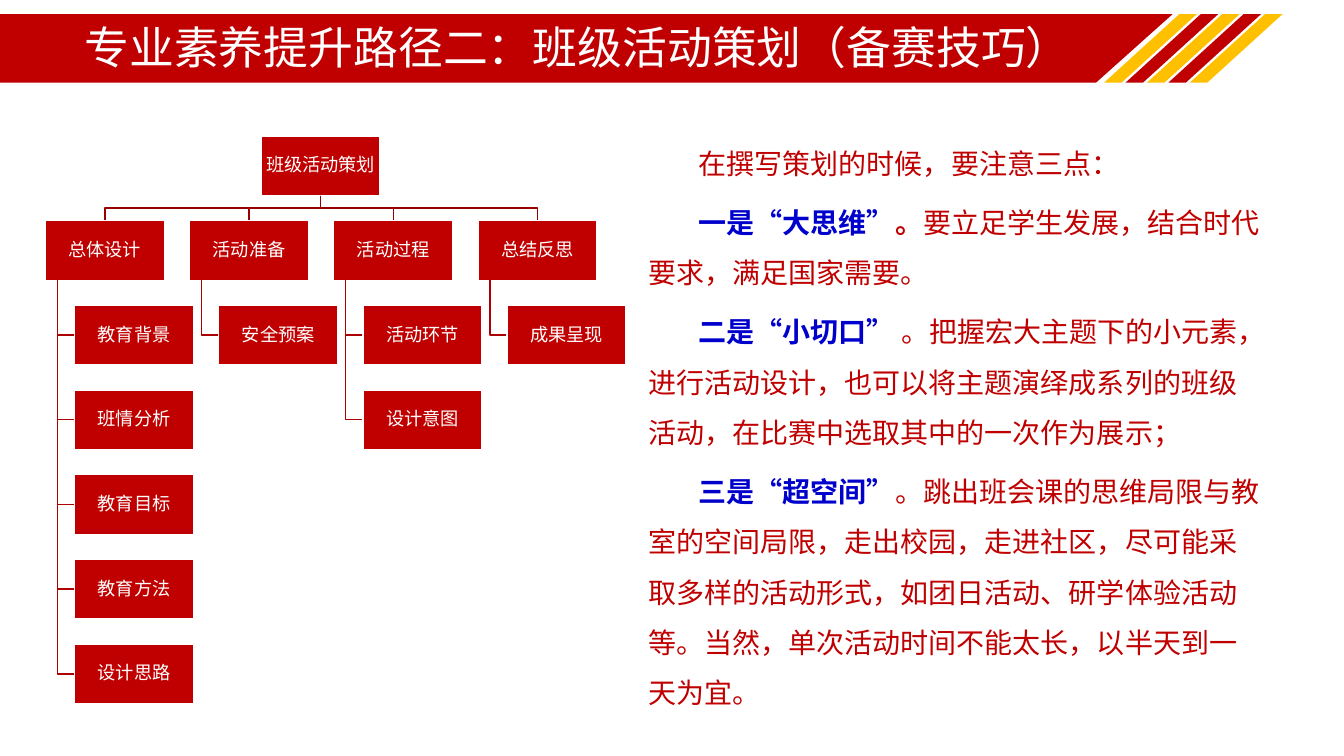
from dataclasses import dataclass

from pptx import Presentation
from pptx.dml.color import RGBColor
from pptx.enum.shapes import MSO_SHAPE
from pptx.enum.text import MSO_ANCHOR, MSO_AUTO_SIZE, PP_ALIGN
from pptx.util import Inches, Pt

RECT = MSO_SHAPE.RECTANGLE
PARALLELOGRAM = MSO_SHAPE.PARALLELOGRAM
MIDDLE = MSO_ANCHOR.MIDDLE
CENTER = PP_ALIGN.CENTER
GROW = MSO_AUTO_SIZE.SHAPE_TO_FIT_TEXT


@dataclass(frozen=True)
class Theme:
    red: RGBColor = RGBColor(0xC0, 0x00, 0x00)
    gold: RGBColor = RGBColor(0xFF, 0xC0, 0x00)
    blue: RGBColor = RGBColor(0x00, 0x00, 0xCC)
    white: RGBColor = RGBColor(0xFF, 0xFF, 0xFF)
    trunk: RGBColor = RGBColor(0x9A, 0x00, 0x00)
    branch: RGBColor = RGBColor(0xAE, 0x00, 0x00)
    heading_font: str = "Roboto"
    body_font: str = "Times New Roman"
    title_size: Pt = Pt(32)
    body_size: Pt = Pt(20)
    box_size: Pt = Pt(13)
    line_width: Pt = Pt(1)


THEME = Theme()

TITLE = "专业素养提升路径二：班级活动策划（备赛技巧）"
ROOT = "班级活动策划"
BRANCHES = [
    ("总体设计", ["教育背景", "班情分析", "教育目标", "教育方法", "设计思路"]),
    ("活动准备", ["安全预案"]),
    ("活动过程", ["活动环节", "设计意图"]),
    ("总结反思", ["成果呈现"]),
]
# Each paragraph: bold blue lead, bold red text, plain red text
ADVICE = [
    ("", "", "在撰写策划的时候，要注意三点："),
    ("一是“大思维”", "。", "要立足学生发展，结合时代要求，满足国家需要。"),
    ("二是“小切口” ", "", "。把握宏大主题下的小元素，进行活动设计，也可以将主题演绎成"
     "系列的班级活动，在比赛中选取其中的一次作为展示；"),
    ("三是“超空间”", "", "。跳出班会课的思维局限与教室的空间局限，走出校园，走进社区，"
     "尽可能采取多样的活动形式，如团日活动、研学体验活动等。当然，单次活动时间不能太长，"
     "以半天到一天为宜。"),
]

# Organisation chart grid, in inches
BOX_W, BOX_H = 1.18, 0.59
ROOT_X, ROOT_Y = 2.59, 1.35
FIRST_X, COLUMN_STEP, ROW_STEP = 0.45, 1.43, 0.84
LEAF_INDENT, STEM_INDENT = 0.29, 0.12


def style_font(p, name, size, color):
    p.font.name = name
    p.font.size = size
    p.font.color.rgb = color


def add_stripe(slide, x, w, adj, color):
    sp = slide.shapes.add_shape(PARALLELOGRAM, Inches(x), Inches(0.14), Inches(w), Inches(0.68))
    sp.adjustments[0] = adj
    sp.shadow.inherit = False
    sp.fill.solid()
    sp.fill.fore_color.rgb = color
    sp.line.fill.background()


def add_header(slide):
    add_stripe(slide, -0.91, 12.54, 1.117, THEME.red)
    for i in range(5):
        add_stripe(slide, 10.95 + 0.2125 * i, 0.92, 1.098, THEME.red if i % 2 else THEME.gold)

    tf = slide.shapes.add_textbox(Inches(0.74), Inches(0.21), Inches(11.5), Inches(0.57)).text_frame
    tf.word_wrap = True
    tf.vertical_anchor = MIDDLE
    p = tf.paragraphs[0]
    p.text = TITLE
    p.line_spacing = 0.9
    style_font(p, THEME.heading_font, THEME.title_size, THEME.white)


def add_advice(slide):
    tf = slide.shapes.add_textbox(Inches(6.33), Inches(1.24), Inches(6.31), Inches(5.34)).text_frame
    tf.word_wrap = True
    tf.auto_size = GROW
    for i, (lead, strong, plain) in enumerate(ADVICE):
        p = tf.add_paragraph() if i else tf.paragraphs[0]
        p._p.get_or_add_pPr().set("indent", str(Inches(0.5)))
        p.line_spacing = 1.5
        p.space_after = Pt(6)
        style_font(p, THEME.body_font, THEME.body_size, THEME.red)
        for text, color, bold in ((lead, THEME.blue, True), (strong, THEME.red, True),
                                  (plain, THEME.red, False)):
            if text:
                r = p.add_run()
                r.text = text
                r.font.bold = bold
                r.font.color.rgb = color


def add_elbow(slide, points, color):
    start, *rest = [(Inches(x), Inches(y)) for x, y in points]
    builder = slide.shapes.build_freeform(*start)
    builder.add_line_segments(rest, close=False)
    sp = builder.convert_to_shape()
    sp.shadow.inherit = False
    sp.fill.background()
    sp.line.color.rgb = color
    sp.line.width = THEME.line_width


def add_box(slide, x, y, text):
    sp = slide.shapes.add_shape(RECT, Inches(x), Inches(y), Inches(BOX_W), Inches(BOX_H))
    sp.shadow.inherit = False
    sp.fill.solid()
    sp.fill.fore_color.rgb = THEME.red
    sp.line.color.rgb = THEME.white
    sp.line.width = THEME.line_width
    tf = sp.text_frame
    tf.word_wrap = True
    tf.vertical_anchor = MIDDLE
    tf.margin_left = tf.margin_right = tf.margin_top = tf.margin_bottom = Inches(0.01)
    p = tf.paragraphs[0]
    p.text = text
    p.alignment = CENTER
    p.line_spacing = 0.9
    style_font(p, THEME.heading_font, THEME.box_size, THEME.white)


def add_org_chart(slide):
    root_mid, root_bottom = ROOT_X + BOX_W / 2, ROOT_Y + BOX_H
    branch_y = ROOT_Y + ROW_STEP
    bend_y = (root_bottom + branch_y) / 2
    add_box(slide, ROOT_X, ROOT_Y, ROOT)
    for col, (branch, leaves) in enumerate(BRANCHES):
        x = FIRST_X + col * COLUMN_STEP
        mid = x + BOX_W / 2
        add_elbow(slide, [(root_mid, root_bottom), (root_mid, bend_y), (mid, bend_y),
                          (mid, branch_y)], THEME.trunk)
        add_box(slide, x, branch_y, branch)

        # Leaves hang from a stem under the branch
        stem_x, leaf_x = x + STEM_INDENT, x + LEAF_INDENT
        for row, leaf in enumerate(leaves, start=1):
            leaf_y = branch_y + row * ROW_STEP
            leaf_mid = leaf_y + BOX_H / 2
            add_elbow(slide, [(stem_x, branch_y + BOX_H), (stem_x, leaf_mid),
                              (leaf_x, leaf_mid)], THEME.branch)
            add_box(slide, leaf_x, leaf_y, leaf)


def main():
    prs = Presentation()
    prs.slide_width, prs.slide_height = Inches(13.33), Inches(7.5)
    slide = prs.slides.add_slide(prs.slide_layouts[6])
    add_header(slide)
    add_advice(slide)
    add_org_chart(slide)
    prs.save("out.pptx")


if __name__ == "__main__":
    main()
